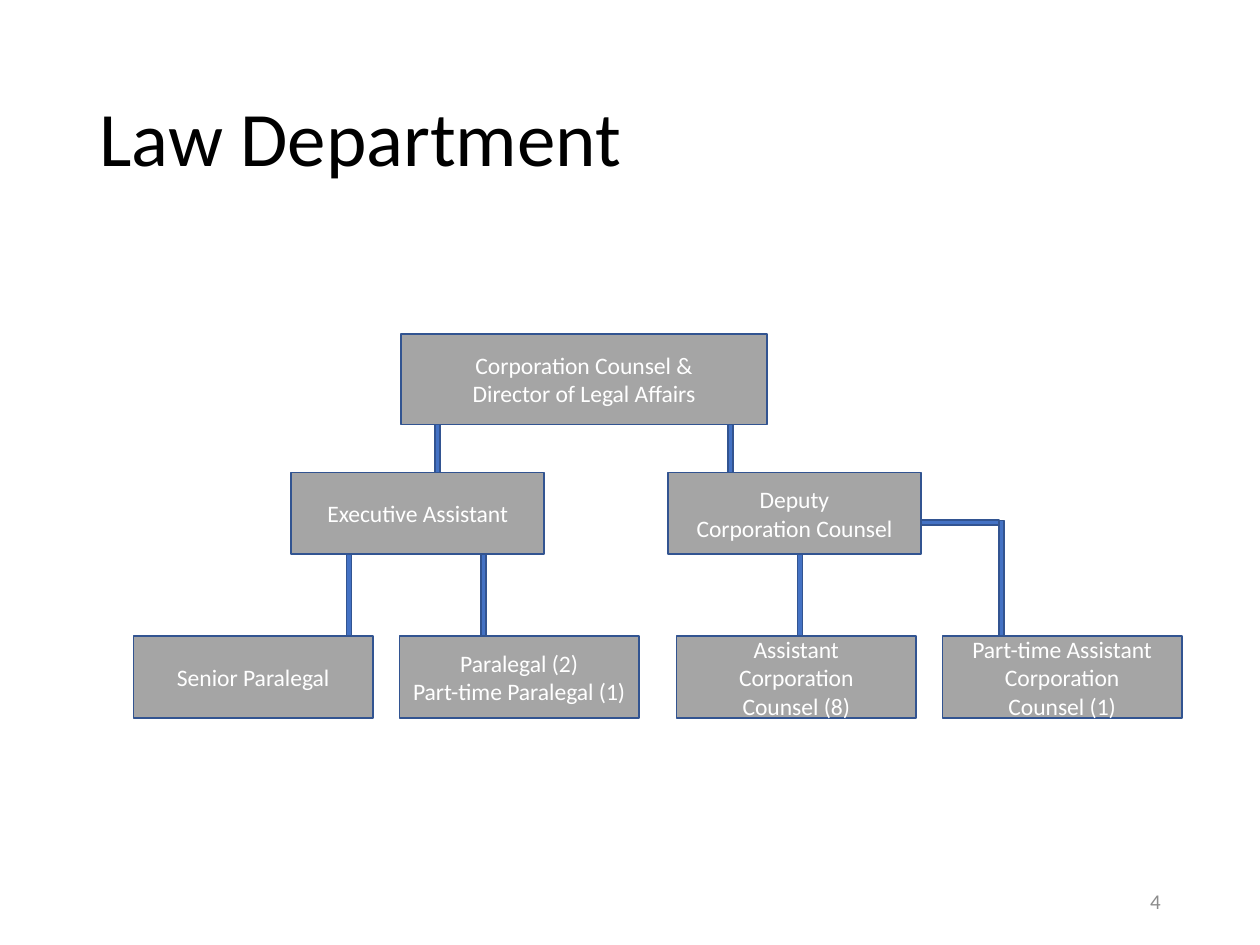
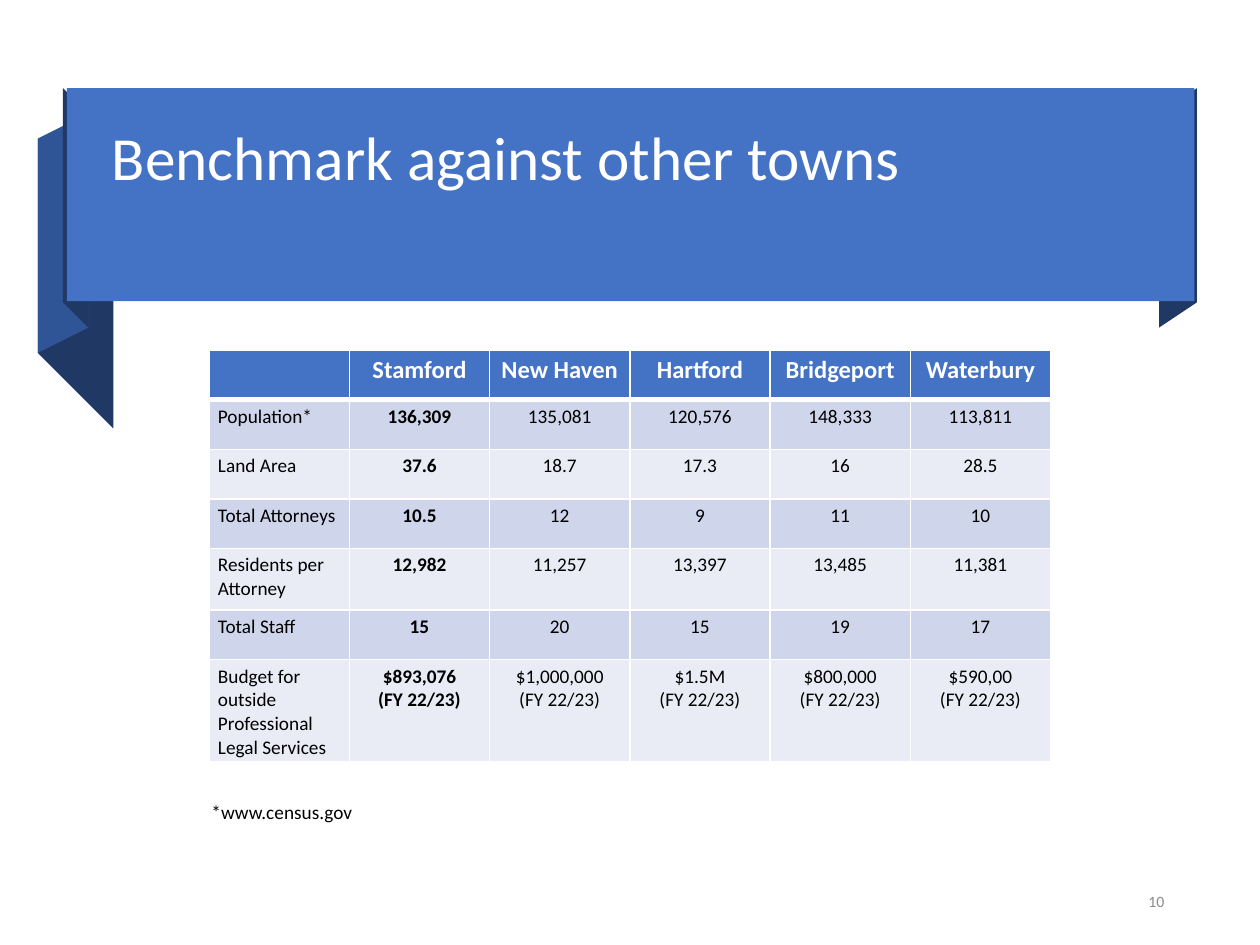
"""Builds the Law Department chart and the benchmark table slides."""
from lxml.etree import SubElement
from pptx import Presentation
from pptx.dml.color import RGBColor
from pptx.enum.shapes import MSO_SHAPE as SHAPE
from pptx.enum.text import MSO_ANCHOR as ANCHOR, PP_ALIGN as ALIGN
from pptx.oxml.ns import qn
from pptx.util import Inches, Pt

BLUE = RGBColor(0x44, 0x72, 0xC4)
OUTLINE = RGBColor(0x32, 0x54, 0x91)
FOLD = RGBColor(0x2F, 0x55, 0x97)
NAVY = RGBColor(0x20, 0x38, 0x64)
GREY = RGBColor(0xA5, 0xA5, 0xA5)
FOOTER = RGBColor(0x8C, 0x8C, 0x8C)
BAND_DARK = RGBColor(0xCF, 0xD5, 0xEA)
BAND_LIGHT = RGBColor(0xE9, 0xEB, 0xF5)
WHITE = RGBColor(0xFF, 0xFF, 0xFF)
BLACK = RGBColor(0, 0, 0)
FONT = "Calibri"
MARGINS = dict(margin_left=Inches(0.07), margin_right=Inches(0.07),
               margin_top=Inches(0.04), margin_bottom=Inches(0.04))

prs = Presentation()
prs.slide_width, prs.slide_height = Inches(10), Inches(7.5)
U = prs.slide_width // 100
chart_slide, table_slide = [prs.slides.add_slide(prs.slide_layouts[6]) for _ in range(2)]


def rect(s, frame, fill, line=None):
    """Add a rectangle placed in grid units of a hundredth of the slide width."""
    sp = s.shapes.add_shape(SHAPE.RECTANGLE, *[round(U * v) for v in frame])
    sp.shadow.inherit = False
    sp.fill.solid()
    sp.fill.fore_color.rgb = fill
    if line is None:
        sp.line.fill.background()
    else:
        sp.line.color.rgb = line
        sp.line.width = Pt(1)
    return sp


def write(tf, text, size, color, align=ALIGN.LEFT, bold=False):
    """Fill a text frame and format every run in it."""
    tf.text = text
    tf.word_wrap = True
    for p in tf.paragraphs:
        p.alignment = align
        for r in p.runs:
            r.font.name, r.font.size, r.font.bold = FONT, Pt(size), bold
            r.font.color.rgb = color


BAR = 0.4
TOP, MIDDLE, BOTTOM = 26.5, 37.5, 50.5
ELBOW_X, ELBOW_Y = 79.3, 41.3
bars = [(x, 33.7, BAR, MIDDLE - 33.7) for x in (34.5, 57.8)]
bars += [(x, 44, BAR, BOTTOM - 44) for x in (27.5, 38.2, 63.3)]
bars += [(70.1, ELBOW_Y, ELBOW_X - 70.1, BAR), (ELBOW_X, ELBOW_Y, BAR, BOTTOM - ELBOW_Y)]
for frame in bars:
    rect(chart_slide, frame, BLUE, OUTLINE)

posts = [
    (31.8, TOP, 29.1, 7.2, "Corporation Counsel &\nDirector of Legal Affairs"),
    (23.1, MIDDLE, 20.1, 6.5, "Executive Assistant"),
    (53, MIDDLE, 20.1, 6.5, "Deputy\nCorporation Counsel"),
    (10.6, BOTTOM, 19, 6.5, "Senior Paralegal"),
    (31.7, BOTTOM, 19, 6.5, "Paralegal (2)\nPart-time Paralegal (1)"),
    (53.7, BOTTOM, 19, 6.5, "Assistant\nCorporation\nCounsel (8)"),
    (74.8, BOTTOM, 19, 6.5, "Part-time Assistant\nCorporation\nCounsel (1)"),
]
for *frame, text in posts:
    tf = rect(chart_slide, frame, GREY, OUTLINE).text_frame
    write(tf, text, 13.5, WHITE, ALIGN.CENTER)
    tf.vertical_anchor = ANCHOR.MIDDLE
    for side, gap in MARGINS.items():
        setattr(tf, side, gap)

ribbon_folds = [
    (NAVY, [(9.2, 34.1), (3.4, 27.8), (3.4, 11.2), (9.2, 17.5)]),
    (FOLD, [(6.7, 25.8), (3.4, 27.8), (3.4, 11.2), (6.7, 9.2)]),
    (NAVY, [(6.7, 25.7), (5.3, 23.9), (5.3, 7), (6.7, 8.9)]),
    (NAVY, [(94.7, 23.8), (92.1, 26), (92.1, 9.1), (94.7, 7)]),
]
for color, (start, *rest) in ribbon_folds:
    outline = table_slide.shapes.build_freeform(*start, scale=U)
    outline.add_line_segments(rest, close=True)
    sp = outline.convert_to_shape()
    sp.shadow.inherit = False
    sp.fill.solid()
    sp.fill.fore_color.rgb = color
    sp.line.fill.background()
rect(table_slide, (5.3, 7, 89.5, 16.9), BLUE)

YEAR = "\n(FY 22/23)"
rows = [
    ("", "Stamford", "New Haven", "Hartford", "Bridgeport", "Waterbury"),
    ("Population*", "136,309", "135,081", "120,576", "148,333", "113,811"),
    ("Land Area", "37.6", "18.7", "17.3", "16", "28.5"),
    ("Total Attorneys", "10.5", "12", "9", "11", "10"),
    ("Residents per Attorney", "12,982", "11,257", "13,397", "13,485", "11,381"),
    ("Total Staff", "15", "20", "15", "19", "17"),
    ("Budget for outside Professional Legal Services", "$893,076" + YEAR,
     "$1,000,000" + YEAR, "$1.5M" + YEAR, "$800,000" + YEAR, "$590,00" + YEAR),
]
heights = [3.93, 3.93, 3.93, 3.93, 4.9, 3.93, 7.8]
frame = [round(U * v) for v in (16.6, 27.8, 66.8, sum(heights))]
table = table_slide.shapes.add_table(len(rows), len(rows[0]), *frame).table
for i, row in enumerate(rows):
    table.rows[i].height = round(U * heights[i])
    for j, text in enumerate(row):
        cell = table.cell(i, j)
        for side, gap in MARGINS.items():
            setattr(cell, side, gap)
        header = i == 0
        write(cell.text_frame, text, 14 if header else 11, WHITE if header else BLACK,
              ALIGN.CENTER if j else ALIGN.LEFT, header or j == 1)
        tcPr = cell._tc.get_or_add_tcPr()
        for tag in ("lnL", "lnR", "lnT", "lnB"):
            thick = (i, tag) in ((0, "lnB"), (1, "lnT"))
            ln = SubElement(tcPr, qn("a:" + tag), w=str(Pt(3 if thick else 1)))
            SubElement(SubElement(ln, qn("a:solidFill")), qn("a:srgbClr"), val=str(WHITE))
        cell.fill.solid()
        cell.fill.fore_color.rgb = BLUE if header else BAND_DARK if i % 2 else BAND_LIGHT

labels = [
    (chart_slide, (6.9, 4, 86.2, 14.5), "Law Department", 44, BLACK, ALIGN.LEFT, ANCHOR.MIDDLE),
    (chart_slide, (70.6, 69.5, 22.5, 4), "4", 12, FOOTER, ALIGN.RIGHT, ANCHOR.MIDDLE),
    (table_slide, (7.9, 9.6, 84.2, 12.5), "Benchmark against other towns", 35, WHITE,
     ALIGN.LEFT, ANCHOR.TOP),
    (table_slide, (87.8, 69.8, 5.6, 3.5), "10", 9, FOOTER, ALIGN.RIGHT, ANCHOR.MIDDLE),
    (table_slide, (15.8, 63, 15.8, 2.9), "*www.census.gov", 11, BLACK, ALIGN.LEFT, ANCHOR.TOP),
]
for s, frame, text, size, color, align, anchor in labels:
    tf = s.shapes.add_textbox(*[round(U * v) for v in frame]).text_frame
    write(tf, text, size, color, align)
    tf.vertical_anchor = anchor
    if size > 30:
        tf.paragraphs[0].line_spacing = 0.9

prs.save("out.pptx")
